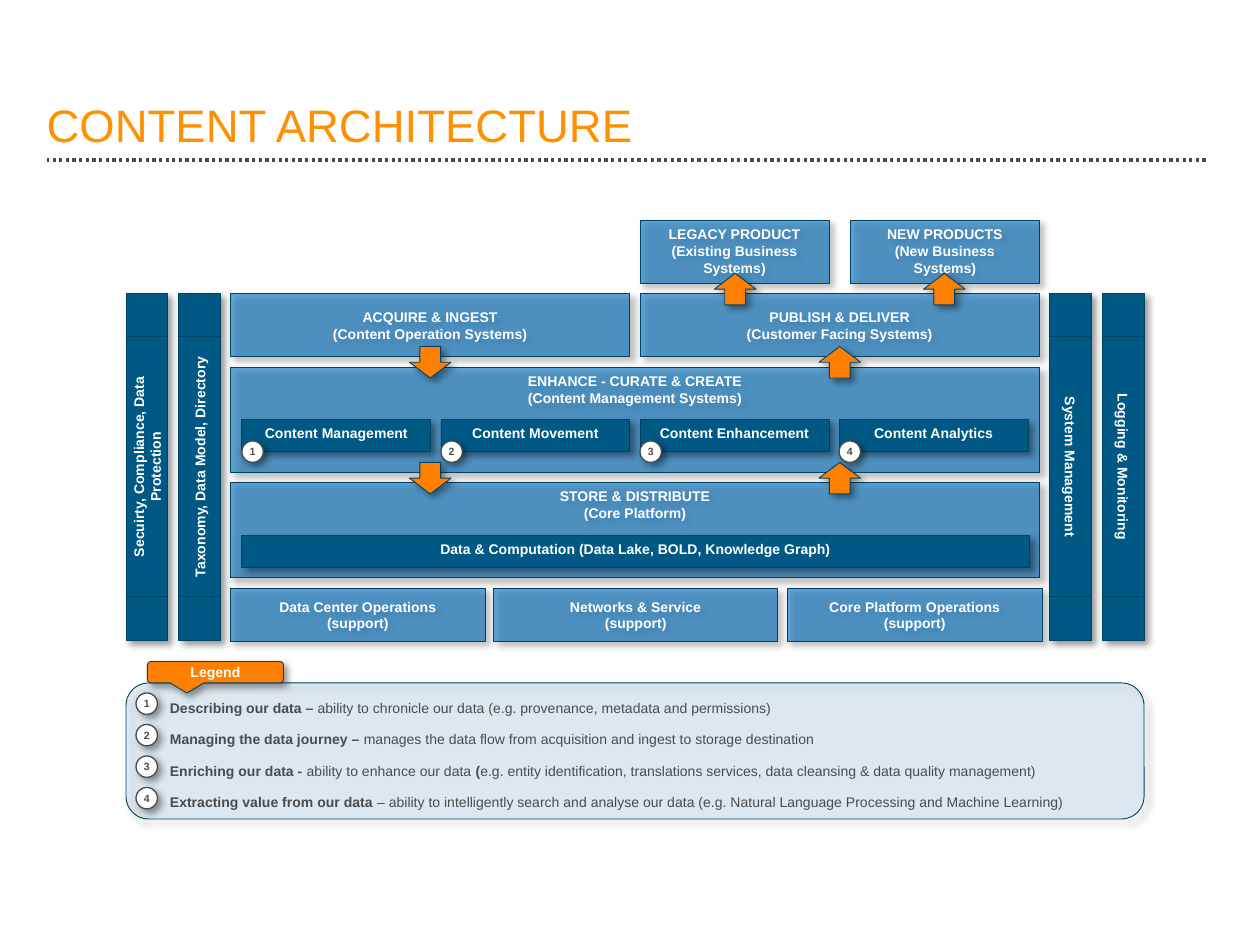
"""Build the content architecture slide with its legend."""
from pptx import Presentation
from pptx.dml.color import RGBColor
from pptx.enum.dml import MSO_LINE
from pptx.enum.shapes import MSO_CONNECTOR, MSO_SHAPE
from pptx.enum.text import MSO_ANCHOR, PP_ALIGN
from pptx.oxml import parse_xml
from pptx.oxml.ns import nsdecls, qn
from pptx.util import Inches, Pt

BLUE = RGBColor(0x00, 0x70, 0xC0)
DEEP_BLUE = RGBColor(0x00, 0x59, 0x84)
NAVY = RGBColor(0x00, 0x42, 0x62)
ORANGE = RGBColor(0xFF, 0x80, 0x00)
TITLE_ORANGE = RGBColor(0xFF, 0x91, 0x00)
GRAY = RGBColor(0x4B, 0x4B, 0x4B)
WHITE = RGBColor(0xFF, 0xFF, 0xFF)

RECTANGLE = MSO_SHAPE.RECTANGLE
ROUNDED = MSO_SHAPE.ROUNDED_RECTANGLE
PILLAR = MSO_SHAPE.FLOWCHART_PREDEFINED_PROCESS
DOWN = MSO_SHAPE.DOWN_ARROW
UP = MSO_SHAPE.UP_ARROW
OVAL = MSO_SHAPE.OVAL
CALLOUT = MSO_SHAPE.ROUNDED_RECTANGULAR_CALLOUT
TOP, MIDDLE, BOTTOM = MSO_ANCHOR.TOP, MSO_ANCHOR.MIDDLE, MSO_ANCHOR.BOTTOM
CENTER = PP_ALIGN.CENTER

LABEL = {"name": "Arial", "size": Pt(8), "bold": True}
NUMBER = {"name": "Arial", "size": Pt(6), "bold": True}
PLAIN = {"name": "Arial", "size": Pt(8), "bold": False}
HEADING = {"name": "Arial", "size": Pt(26), "bold": False}
SHAPE_MARGINS = {
    "margin_left": Inches(0.1), "margin_right": Inches(0.1),
    "margin_top": Inches(0.04), "margin_bottom": Inches(0.04),
}
TITLE_FRAME = {
    "margin_left": 0, "margin_right": 0, "word_wrap": True,
    "vertical_anchor": BOTTOM,
}
SHADOW = (
    f'<a:outerShdw {nsdecls("a")} blurRad="50800" dist="38100" dir="2700000"'
    ' algn="tl" rotWithShape="0"><a:srgbClr val="000000">'
    '<a:alpha val="40000"/></a:srgbClr></a:outerShdw>'
)

deck = Presentation()
deck.slide_width, deck.slide_height = Inches(10), Inches(7.5)
slide = deck.slides.add_slide(deck.slide_layouts[6])


def add_span(para, text, style, color):
    span = para.add_run()
    span.text = text
    for name, value in style.items():
        setattr(span.font, name, value)
    span.font.color.rgb = color


def add_box(kind, place, fill, lines=(), opacity=100, anchor=MIDDLE,
            style=LABEL, color=WHITE, outline=NAVY, weight=0.5):
    box = slide.shapes.add_shape(kind, *map(Inches, place))
    box.fill.solid()
    box.fill.fore_color.rgb = fill
    box.line.color.rgb = outline
    box.line.width = Pt(weight)
    properties = box._element.spPr
    if opacity < 100:
        tint = properties.find(qn("a:solidFill"))[0]
        tint.append(parse_xml(f'<a:alpha {nsdecls("a")} val="{opacity * 1000}"/>'))
    box.shadow.inherit = False
    properties.find(qn("a:effectLst")).append(parse_xml(SHADOW))
    frame = box.text_frame
    frame.word_wrap = True
    frame.vertical_anchor = anchor
    for name, value in SHAPE_MARGINS.items():
        setattr(frame, name, value)
    for index, line in enumerate(lines):
        para = frame.add_paragraph() if index else frame.paragraphs[0]
        para.alignment = CENTER
        add_span(para, line, style, color)
    return box


rule = slide.shapes.add_connector(
    MSO_CONNECTOR.STRAIGHT, Inches(9.57), Inches(1.27), Inches(0.37), Inches(1.27))
rule.line.color.rgb = GRAY
rule.line.width = Pt(1.9)
rule.line.dash_style = MSO_LINE.ROUND_DOT
rule._element.spPr.append(parse_xml(f'<a:effectLst {nsdecls("a")}/>'))

title = slide.shapes.add_textbox(Inches(0.37), Inches(0.18), Inches(9.26), Inches(1.07))
for name, value in TITLE_FRAME.items():
    setattr(title.text_frame, name, value)
add_span(title.text_frame.paragraphs[0], "CONTENT ARCHITECTURE", HEADING, TITLE_ORANGE)

add_box(ROUNDED, (1, 5.42, 8.08, 1.08), BLUE, opacity=10)

LAYERS = [
    ((1.83, 2.33, 3.17, 0.5), MIDDLE, "ACQUIRE & INGEST", "(Content Operation Systems)"),
    ((5.08, 2.33, 3.17, 0.5), MIDDLE, "PUBLISH & DELIVER", "(Customer Facing Systems)"),
    ((1.83, 2.92, 6.42, 0.83), TOP, "ENHANCE - CURATE & CREATE",
     "(Content Management Systems)"),
    ((1.83, 3.83, 6.42, 0.75), TOP, "STORE & DISTRIBUTE", "(Core Platform)"),
    ((1.83, 4.67, 2.02, 0.42), MIDDLE, "Data Center Operations", "(support)"),
    ((3.92, 4.67, 2.25, 0.42), MIDDLE, "Networks & Service", "(support)"),
    ((6.25, 4.67, 2.02, 0.42), MIDDLE, "Core Platform Operations", "(support)"),
    ((5.08, 1.75, 1.5, 0.5), TOP, "LEGACY PRODUCT", "(Existing Business Systems)"),
    ((6.75, 1.75, 1.5, 0.5), TOP, "NEW PRODUCTS", "(New Business Systems)"),
]
for place, anchor, *lines in LAYERS:
    add_box(RECTANGLE, place, BLUE, lines, opacity=60, anchor=anchor)

SERVICES = ["Content Management", "Content Movement", "Content Enhancement",
            "Content Analytics"]
service_lefts = [1.92 + 1.58 * index for index in range(len(SERVICES))]
for left, service in zip(service_lefts, SERVICES):
    add_box(RECTANGLE, (left, 3.33, 1.5, 0.25), DEEP_BLUE, [service], anchor=TOP)
add_box(RECTANGLE, (1.92, 4.25, 6.25, 0.25), DEEP_BLUE,
        ["Data & Computation (Data Lake, BOLD, Knowledge Graph)"], anchor=TOP)

PILLARS = [
    (-0.21, 270, "Secuirty, Compliance, Data Protection"),
    (0.21, 270, "Taxonomy, Data Model, Directory"),
    (7.12, 90, "System Management"),
    (7.54, 90, "Logging & Monitoring"),
]
for left, rotation, label in PILLARS:
    pillar = add_box(PILLAR, (left, 3.54, 2.75, 0.33), DEEP_BLUE, [label])
    pillar.rotation = rotation

ARROWS = [(DOWN, 3.25, 2.75), (UP, 6.5, 2.75), (UP, 5.67, 2.17),
          (UP, 7.33, 2.17), (DOWN, 3.25, 3.67), (UP, 6.5, 3.67)]
for kind, left, top in ARROWS:
    add_box(kind, (left, top, 0.33, 0.25), ORANGE)

LEGEND = [
    (5.03, [("Describing our data – ", LABEL),
            ("ability to chronicle our data (e.g. provenance, metadata and permissions)",
             PLAIN)]),
    (5.38, [("Managing the data journey – ", LABEL),
            ("manages the data flow from acquisition and ingest to storage destination",
             PLAIN)]),
    (7.16, [("Enriching our data - ", LABEL), ("ability to enhance our data ", PLAIN),
            ("(", LABEL),
            ("e.g. entity identification, translations services, data cleansing "
             "& data quality management)", PLAIN)]),
    (7.38, [("Extracting value from our data ", LABEL),
            ("– ability to intelligently search and analyse our data "
             "(e.g. Natural Language Processing and Machine Learning)", PLAIN)]),
]
for index, (width, spans) in enumerate(LEGEND):
    top = 5.5 + 0.25 * index
    for left, badge_top in ((service_lefts[index], 3.5), (1.08, top)):
        add_box(OVAL, (left, badge_top, 0.17, 0.17), WHITE, [str(index + 1)],
                style=NUMBER, color=GRAY, outline=GRAY, weight=0.75)
    entry = slide.shapes.add_textbox(Inches(1.25), Inches(top), Inches(width), Inches(0.24))
    entry.text_frame.word_wrap = False
    for text, style in spans:
        add_span(entry.text_frame.paragraphs[0], text, style, GRAY)

tag = add_box(CALLOUT, (1.17, 5.25, 1.08, 0.17), ORANGE, ["Legend"])
for index, value in enumerate((-0.21, 0.97, 0.17)):
    tag.adjustments[index] = value

deck.save("out.pptx")
